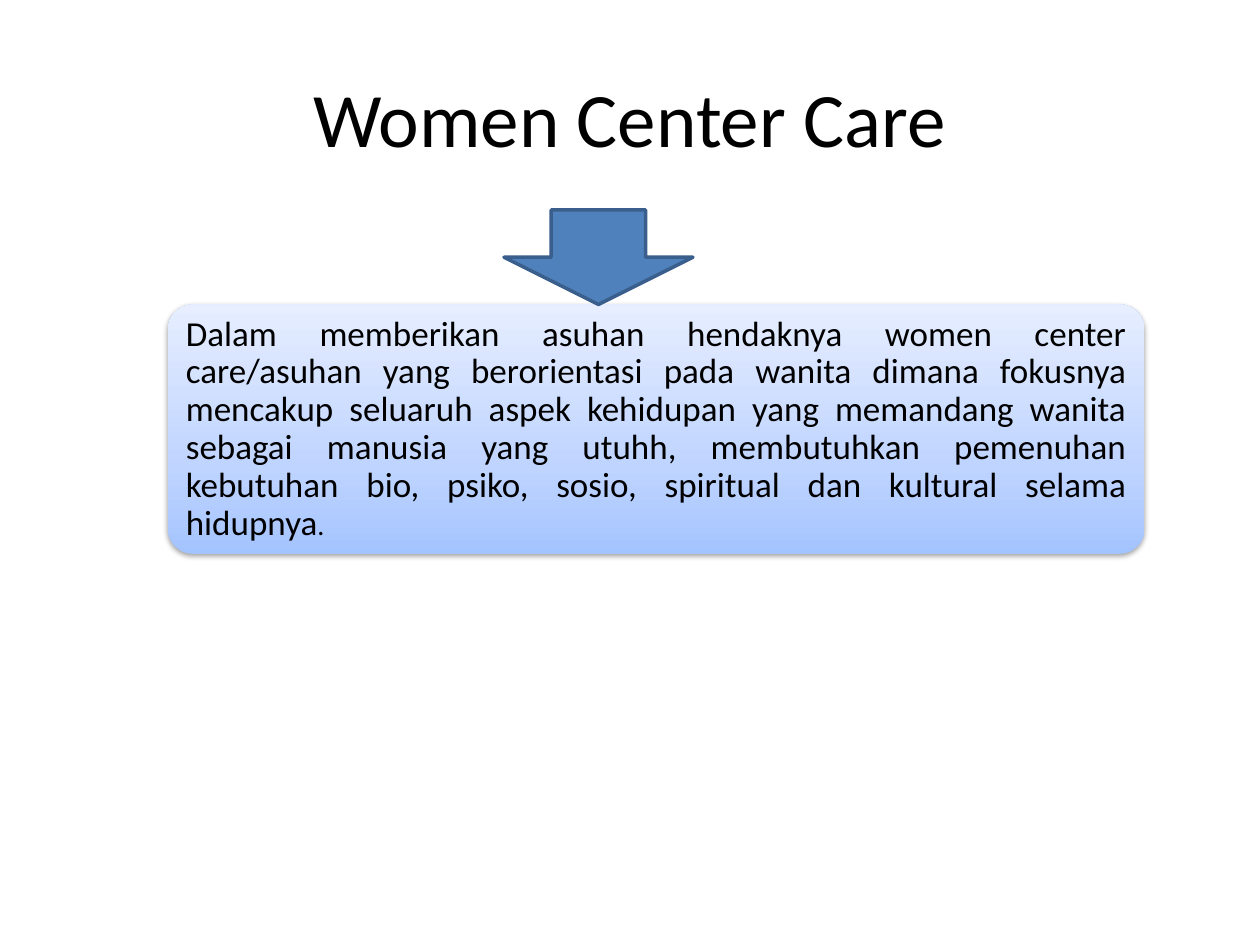
from lxml import etree
from pptx import Presentation
from pptx.dml.color import RGBColor
from pptx.enum.shapes import MSO_SHAPE
from pptx.enum.text import MSO_ANCHOR, PP_ALIGN
from pptx.oxml.ns import qn
from pptx.util import Pt

ROUND_BOX, DOWN_ARROW = MSO_SHAPE.ROUNDED_RECTANGLE, MSO_SHAPE.DOWN_ARROW
MIDDLE = MSO_ANCHOR.MIDDLE
CENTER, JUSTIFY = PP_ALIGN.CENTER, PP_ALIGN.JUSTIFY
TITLE_ONLY = 5

BODY = (
    "Dalam memberikan asuhan hendaknya women center care/asuhan yang "
    "berorientasi pada wanita dimana fokusnya mencakup seluaruh aspek "
    "kehidupan yang memandang wanita sebagai manusia yang utuhh, "
    "membutuhkan pemenuhan kebutuhan bio, psiko, sosio, spiritual dan "
    "kultural selama hidupnya"
)


def rgb(value):
    return RGBColor.from_string(value)


def set_all(target, values):
    for name, value in values.items():
        setattr(target, name, value)


def add_color(parent, value, alpha=None):
    clr = etree.SubElement(parent, qn("a:srgbClr"), val=value)
    if alpha is not None:
        etree.SubElement(clr, qn("a:alpha"), val=str(alpha * 1000))


class SlideBuilder:
    font = "Calibri"
    ink = "000000"

    def __init__(self, s):
        self.s = s

    def add_text(self, shape, runs, align, inset, spacing=1.0):
        tf = shape.text_frame
        set_all(tf, {"word_wrap": True, "vertical_anchor": MIDDLE})
        set_all(tf, {f"margin_{side}": Pt(inset)
                     for side in ("left", "top", "right", "bottom")})
        p = tf.paragraphs[0]
        set_all(p, {"alignment": align, "line_spacing": spacing})
        for text, size in runs:
            r = p.add_run()
            r.text = text
            set_all(r.font, {"name": self.font, "size": Pt(size)})
            r.font.color.rgb = rgb(self.ink)

    def title(self, text, box, size):
        sp = self.s.shapes.title
        set_all(sp, dict(zip(("left", "top", "width", "height"), map(Pt, box))))
        self.add_text(sp, [(text, size)], CENTER, 4)

    def shape(self, kind, box):
        sp = self.s.shapes.add_shape(kind, *map(Pt, box))
        sp.shadow.inherit = False
        return sp

    def arrow(self, box, fill, line, width):
        sp = self.shape(DOWN_ARROW, box)
        sp.fill.solid()
        sp.fill.fore_color.rgb = rgb(fill)
        sp.line.color.rgb = rgb(line)
        sp.line.width = Pt(width)

    def card(self, box, stops, runs):
        sp = self.shape(ROUND_BOX, box)
        sp.adjustments[0] = 0.1
        sp.line.fill.background()
        # Three-stop gradient, running upwards
        sp.fill.gradient()
        sp.fill.gradient_angle = 90
        stop_list = sp.element.spPr.find(".//" + qn("a:gsLst"))
        for old in list(stop_list):
            stop_list.remove(old)
        for pos, color in stops:
            gs = etree.SubElement(stop_list, qn("a:gs"), pos=str(pos * 1000))
            add_color(gs, color)
        # Soft shadow below
        effects = sp.element.spPr.find(qn("a:effectLst"))
        shadow = etree.SubElement(
            effects, qn("a:outerShdw"), blurRad=str(Pt(3.1)),
            dist=str(Pt(1.6)), dir="5400000", rotWithShape="0")
        add_color(shadow, self.ink, 38)
        self.add_text(sp, runs, JUSTIFY, 6, 0.9)


def main():
    prs = Presentation()
    prs.slide_width, prs.slide_height = Pt(720), Pt(540)
    b = SlideBuilder(prs.slides.add_slide(prs.slide_layouts[TITLE_ONLY]))

    # Title
    b.title("Women Center Care", (36, 21.6, 648, 90), 44)
    # Explanation
    b.card((96, 174, 558, 142.5),
           [(0, "A4C4FF"), (35, "BFD4FF"), (100, "E6EEFF")],
           [(BODY, 20), (".", 16)])
    # Arrow from title to explanation
    b.arrow((288, 120, 108, 54), "4F81BD", "3A5F8C", 2)

    prs.save("out.pptx")


if __name__ == "__main__":
    main()
